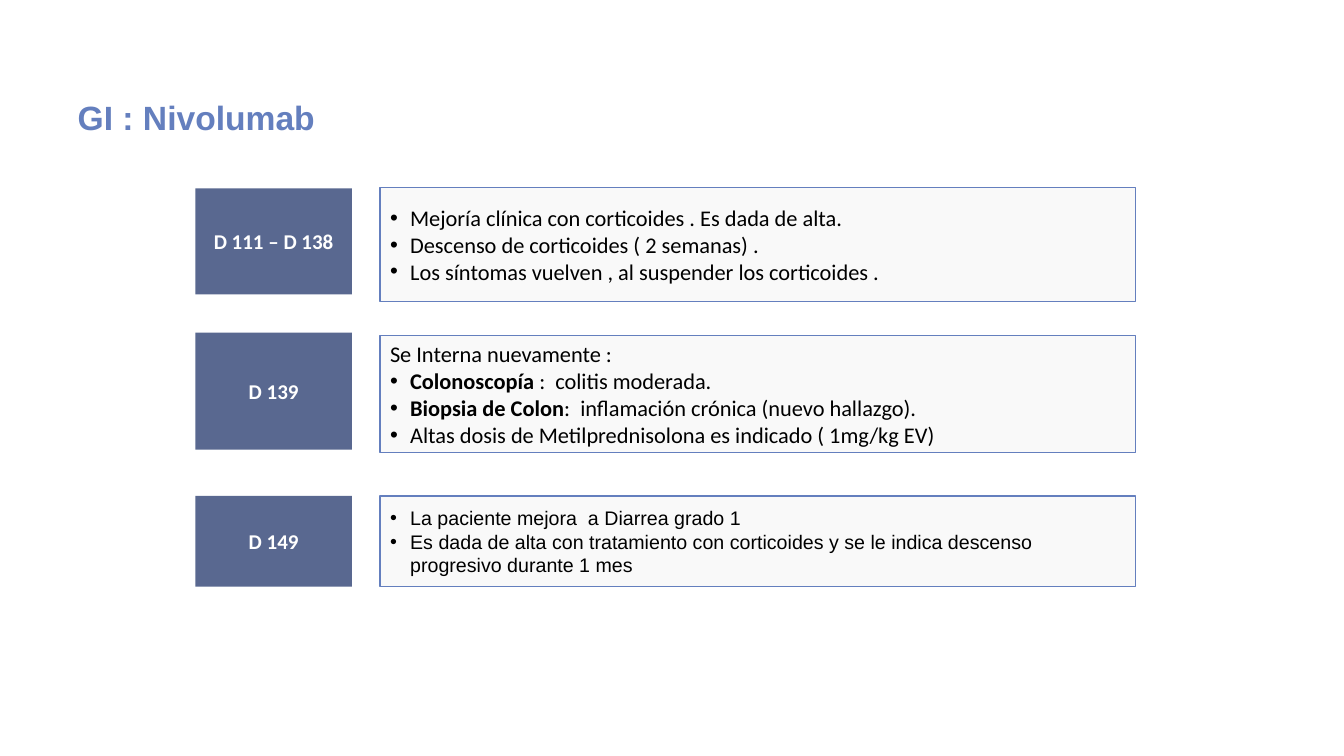
import dataclasses

import lxml.etree
import pptx
import pptx.dml.color
import pptx.enum.shapes
import pptx.enum.text
import pptx.oxml.ns
import pptx.util


@dataclasses.dataclass(frozen=True)
class Theme:
    accent: str = "647FBE"
    day_fill: str = "596890"
    note_fill: str = "F9F9F9"
    light: str = "FFFFFF"
    dark: str = "000000"
    title_size: int = 24
    day_size: int = 15


theme = Theme()
color = pptx.dml.color.RGBColor.from_string
align = pptx.enum.text.PP_ALIGN

deck = pptx.Presentation()
deck.slide_width = pptx.util.Inches(13.33)
deck.slide_height = pptx.util.Inches(7.5)
page = deck.slides.add_slide(deck.slide_layouts[5])


def area(left, top, width, height):
    across, down = deck.slide_width / 100, deck.slide_height / 100
    return [round(share) for share in (left * across, top * down, width * across, height * down)]


def style(font, name, size, ink, bold=False):
    font.name = name
    font.size = pptx.util.Pt(size)
    font.color.rgb = color(ink)
    font.bold = bold


title = page.shapes.title
title.left, title.top, title.width, title.height = area(5.03, 13.47, 82.15, 4.8)
title.text_frame.text = "GI : Nivolumab"
title.text_frame.vertical_anchor = pptx.enum.text.MSO_ANCHOR.MIDDLE
title.text_frame.auto_size = pptx.enum.text.MSO_AUTO_SIZE.NONE
heading = title.text_frame.paragraphs[0]
heading.alignment = align.LEFT
heading.line_spacing = 0.9
style(heading.font, "Arial", theme.title_size, theme.accent, True)

DAY_LEFT, DAY_WIDTH = 14.55, 11.63
NOTE_LEFT, NOTE_WIDTH = 28.28, 56.19
HANG = pptx.util.Inches(0.2)

stages = [
    ("D 111 – D 138", (24.93, 14), (24.8, 15.07), ("Calibri", 16), [
        ("•", "", "Mejoría clínica con corticoides . Es dada de alta."),
        ("•", "", "Descenso de corticoides ( 2 semanas) ."),
        ("•", "", "Los síntomas vuelven , al suspender los corticoides ."),
    ]),
    ("D 139", (44, 15.47), (44.4, 15.47), ("Calibri", 16), [
        ("", "", "Se Interna nuevamente :"),
        ("•", "Colonoscopía ", ":  colitis moderada."),
        ("•", "Biopsia de Colon", ":  inflamación crónica (nuevo hallazgo)."),
        ("•", "", "Altas dosis de Metilprednisolona es indicado ( 1mg/kg EV)"),
    ]),
    ("D 149", (65.6, 12), (65.6, 12), ("Arial", 14), [
        ("•", "", "La paciente mejora  a Diarrea grado 1"),
        ("•", "", "Es dada de alta con tratamiento con corticoides y se le indica "
                  "descenso progresivo durante 1 mes"),
    ]),
]

for day, (day_top, day_height), (note_top, note_height), (face, size), notes in stages:
    day_box, note_box = [
        page.shapes.add_shape(pptx.enum.shapes.MSO_SHAPE.RECTANGLE, *area(*place))
        for place in (
            (DAY_LEFT, day_top, DAY_WIDTH, day_height),
            (NOTE_LEFT, note_top, NOTE_WIDTH, note_height),
        )
    ]
    for box, fill in ((day_box, theme.day_fill), (note_box, theme.note_fill)):
        box.shadow.inherit = False
        box.fill.solid()
        box.fill.fore_color.rgb = color(fill)
        box.text_frame.word_wrap = True

    day_box.line.fill.background()
    day_box.text_frame.text = day
    label = day_box.text_frame.paragraphs[0]
    label.alignment = align.CENTER
    style(label.font, "Calibri", theme.day_size, theme.light, True)

    note_box.line.color.rgb = color(theme.accent)
    note_box.line.width = pptx.util.Pt(1)
    frame = note_box.text_frame
    for index, (bullet, lead, text) in enumerate(notes):
        para = frame.add_paragraph() if index else frame.paragraphs[0]
        para.alignment = align.LEFT
        props = para._p.get_or_add_pPr()
        props.set("marL", str(HANG))
        props.set("indent", str(-HANG))
        if bullet:
            for tag, key, value in (("a:buFont", "typeface", "Arial"), ("a:buChar", "char", bullet)):
                lxml.etree.SubElement(props, pptx.oxml.ns.qn(tag)).set(key, value)
        style(para.font, face, size, theme.dark)
        if lead:
            span = para.add_run()
            span.text = lead
            span.font.bold = True
        para.add_run().text = text

deck.save("out.pptx")
